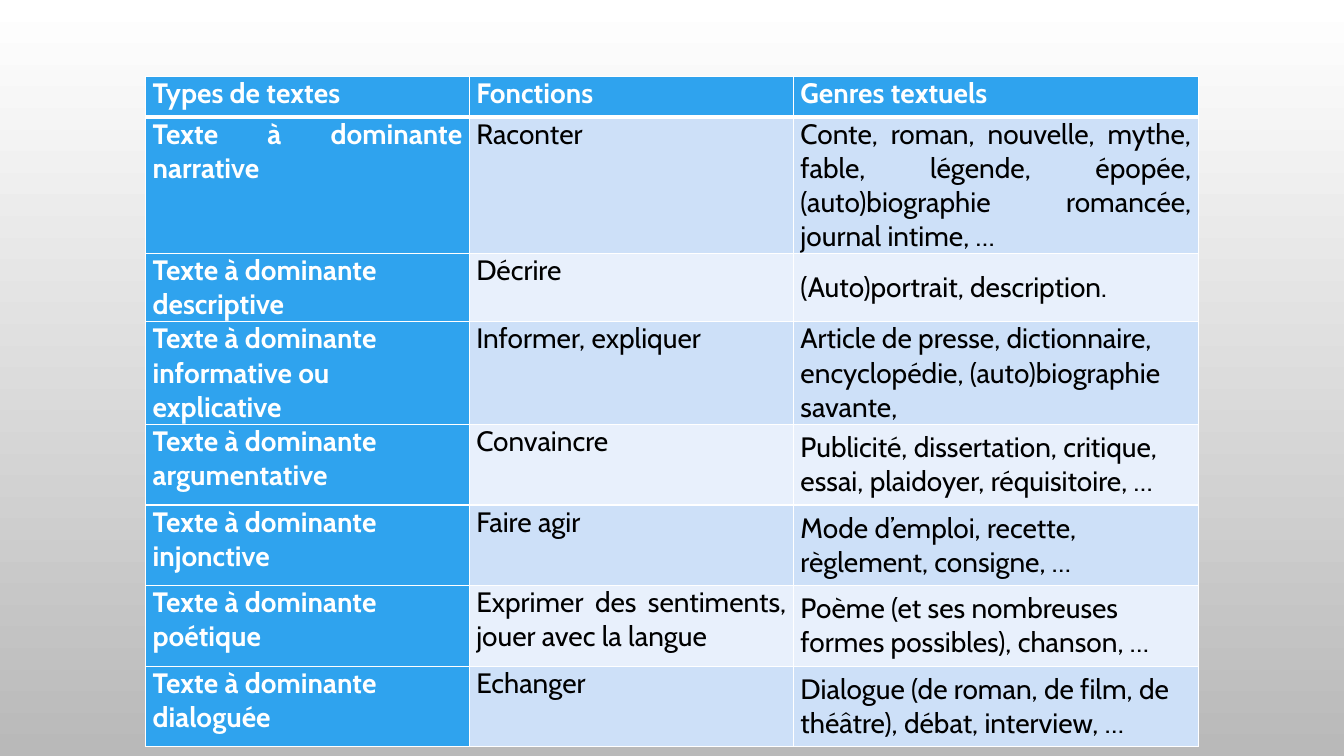
from lxml.etree import SubElement
from pptx import Presentation
from pptx.dml.color import RGBColor
from pptx.enum.text import MSO_ANCHOR, PP_ALIGN
from pptx.oxml.ns import qn
from pptx.util import Pt

COLORS = {
    "white": "FFFFFF",
    "black": "000000",
    "background_end": "B9B9B9",
    "header": "2FA3EE",
    "band_dark": "CDE0F8",
    "band_light": "E8F0FC",
}
COLUMN_WIDTHS = [231.2, 231.6, 289.2]
ROW_HEIGHTS = [28.8, 86.4, 28.8] + [57.6] * 5
ROWS = [
    ("Types de textes", "Fonctions", "Genres textuels"),
    ("Texte à dominante narrative", "Raconter",
     "Conte, roman, nouvelle, mythe, fable, légende, épopée, "
     "(auto)biographie romancée, journal intime, …"),
    ("Texte à dominante descriptive", "Décrire", "(Auto)portrait, description."),
    ("Texte à dominante informative ou explicative", "Informer, expliquer",
     "Article de presse, dictionnaire, encyclopédie, (auto)biographie savante,"),
    ("Texte à dominante argumentative", "Convaincre",
     "Publicité, dissertation, critique, essai, plaidoyer, réquisitoire, …"),
    ("Texte à dominante injonctive", "Faire agir",
     "Mode d’emploi, recette, règlement, consigne, …"),
    ("Texte à dominante poétique", "Exprimer des sentiments, jouer avec la langue",
     "Poème (et ses nombreuses formes possibles), chanson, …"),
    ("Texte à dominante dialoguée", "Echanger",
     "Dialogue (de roman, de film, de théâtre), débat, interview, …"),
]


def rgb(name):
    return RGBColor.from_string(COLORS[name])


def paint_background(slide):
    fill = slide.background.fill
    fill.gradient()
    fill.gradient_angle = 270
    for stop, name in zip(fill.gradient_stops, ("white", "background_end")):
        stop.color.rgb = rgb(name)


def set_borders(cell, top, bottom):
    properties = cell._tc.get_or_add_tcPr()
    for side, width in (("L", 1), ("R", 1), ("T", top), ("B", bottom)):
        line = SubElement(properties, qn(f"a:ln{side}"), w=str(Pt(width)))
        solid = SubElement(line, qn("a:solidFill"))
        SubElement(solid, qn("a:srgbClr"), val=COLORS["white"])


def format_cell(cell, text, row, column):
    is_heading = row == 0 or column == 0

    # Borders come before the fill in the cell properties
    set_borders(cell, top=3 if row == 1 else 1, bottom=3 if row == 0 else 1)
    band = "band_dark" if row % 2 else "band_light"
    cell.fill.solid()
    cell.fill.fore_color.rgb = rgb("header" if is_heading else band)

    cell.margin_left = cell.margin_right = Pt(5)
    cell.margin_top = cell.margin_bottom = 0
    centred = row > 0 and column == 2
    cell.vertical_anchor = MSO_ANCHOR.MIDDLE if centred else MSO_ANCHOR.TOP

    # The first rows and the middle column are justified
    cell.text = text
    paragraph = cell.text_frame.paragraphs[0]
    justified = row < 2 or column == 1 or (row, column) == (2, 2)
    paragraph.alignment = PP_ALIGN.JUSTIFY if justified else PP_ALIGN.LEFT
    font = paragraph.font
    font.name = "Cabin"
    font.size = Pt(20)
    font.bold = is_heading
    font.color.rgb = rgb("white" if is_heading else "black")


def add_text_types_table(slide, left, top, width, height):
    table = slide.shapes.add_table(
        len(ROWS), len(COLUMN_WIDTHS), Pt(left), Pt(top), Pt(width), Pt(height)
    ).table
    for column, column_width in zip(table.columns, COLUMN_WIDTHS):
        column.width = Pt(column_width * width / sum(COLUMN_WIDTHS))
    for row, row_height in zip(table.rows, ROW_HEIGHTS):
        row.height = Pt(row_height * height / sum(ROW_HEIGHTS))
    for row, texts in enumerate(ROWS):
        for column, text in enumerate(texts):
            format_cell(table.cell(row, column), text, row, column)


def main():
    presentation = Presentation()
    presentation.slide_width = Pt(960)
    presentation.slide_height = Pt(540)
    slide = presentation.slides.add_slide(presentation.slide_layouts[6])
    paint_background(slide)
    add_text_types_table(slide, 104, 54.8, sum(COLUMN_WIDTHS), sum(ROW_HEIGHTS))
    presentation.save("out.pptx")


if __name__ == "__main__":
    main()
